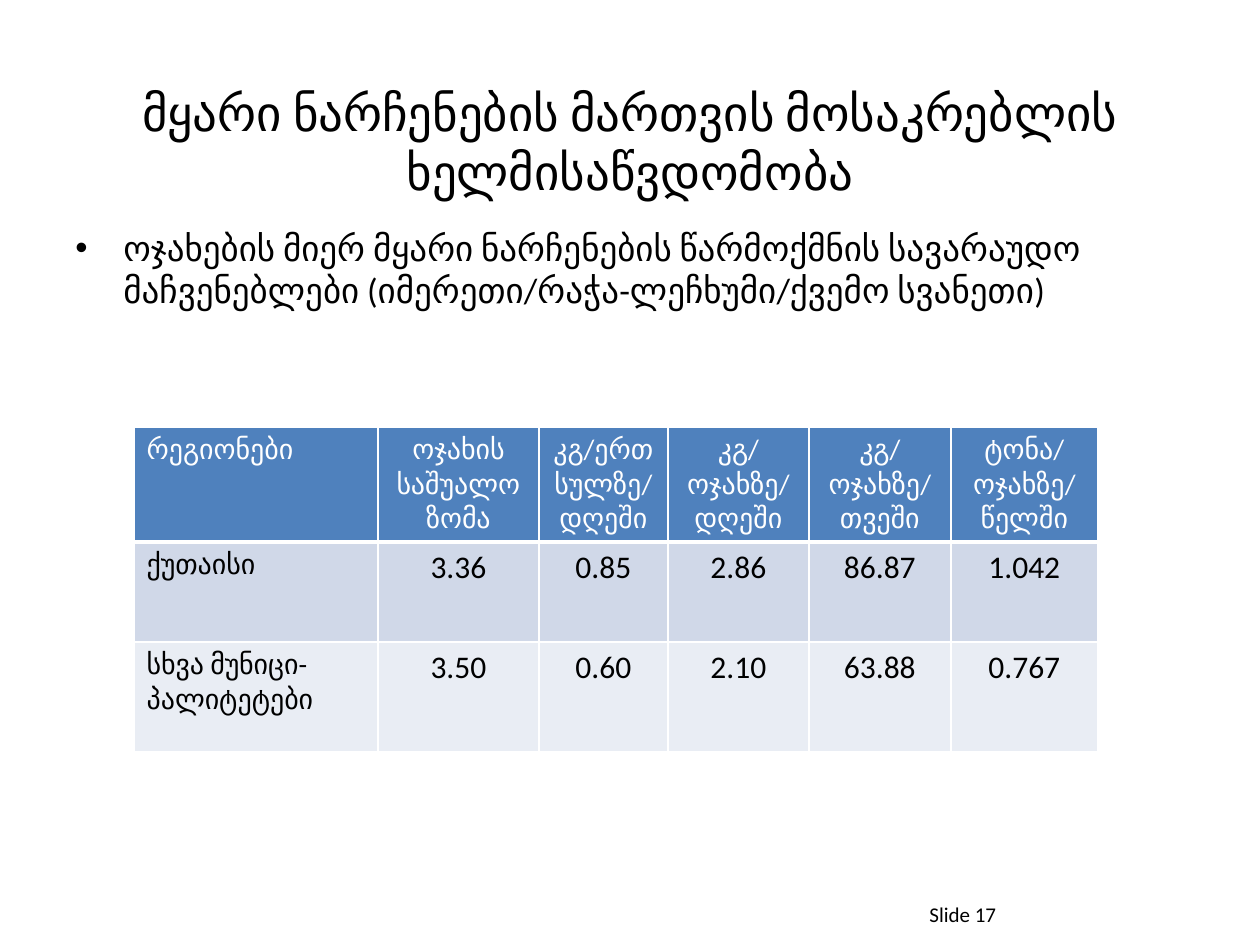
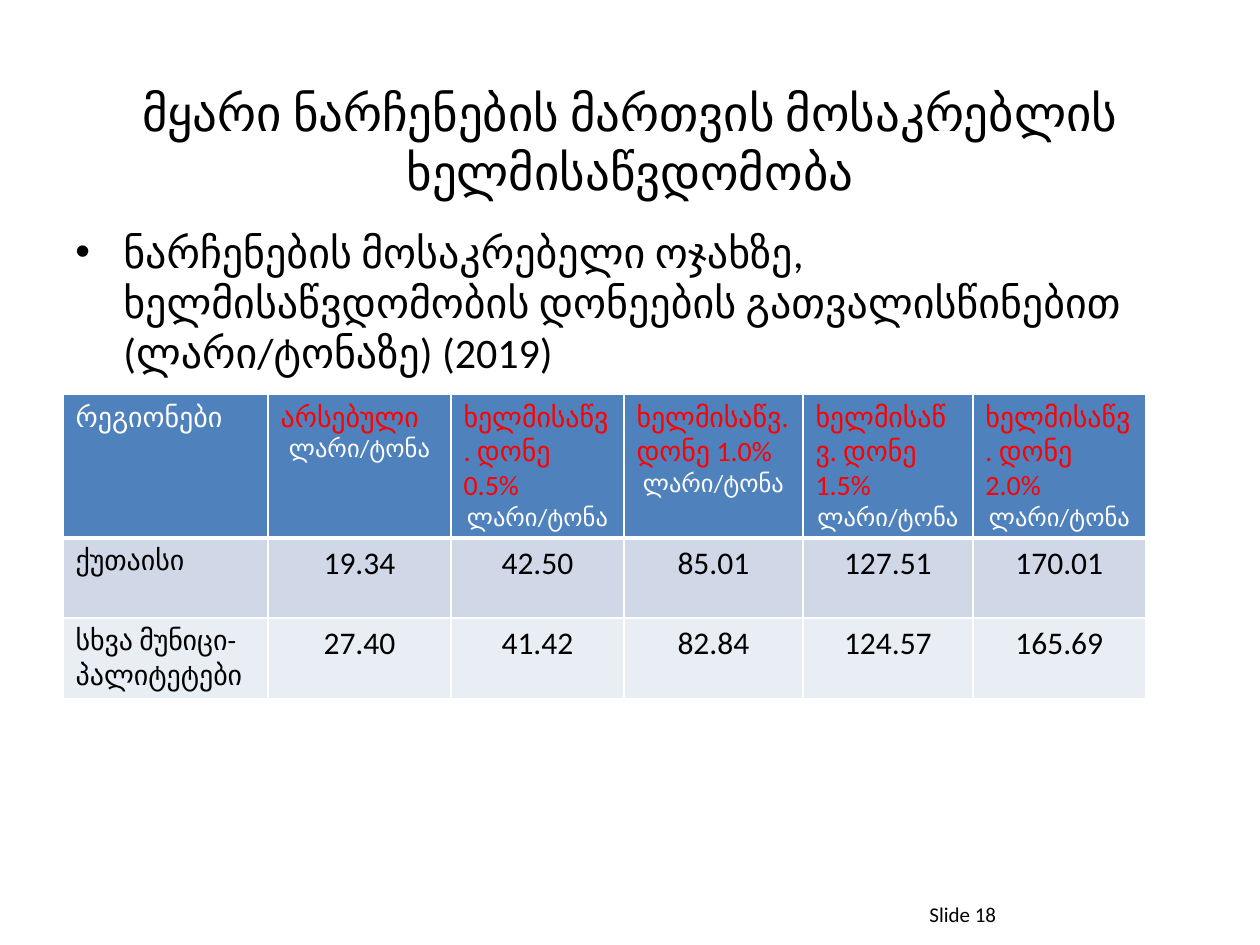
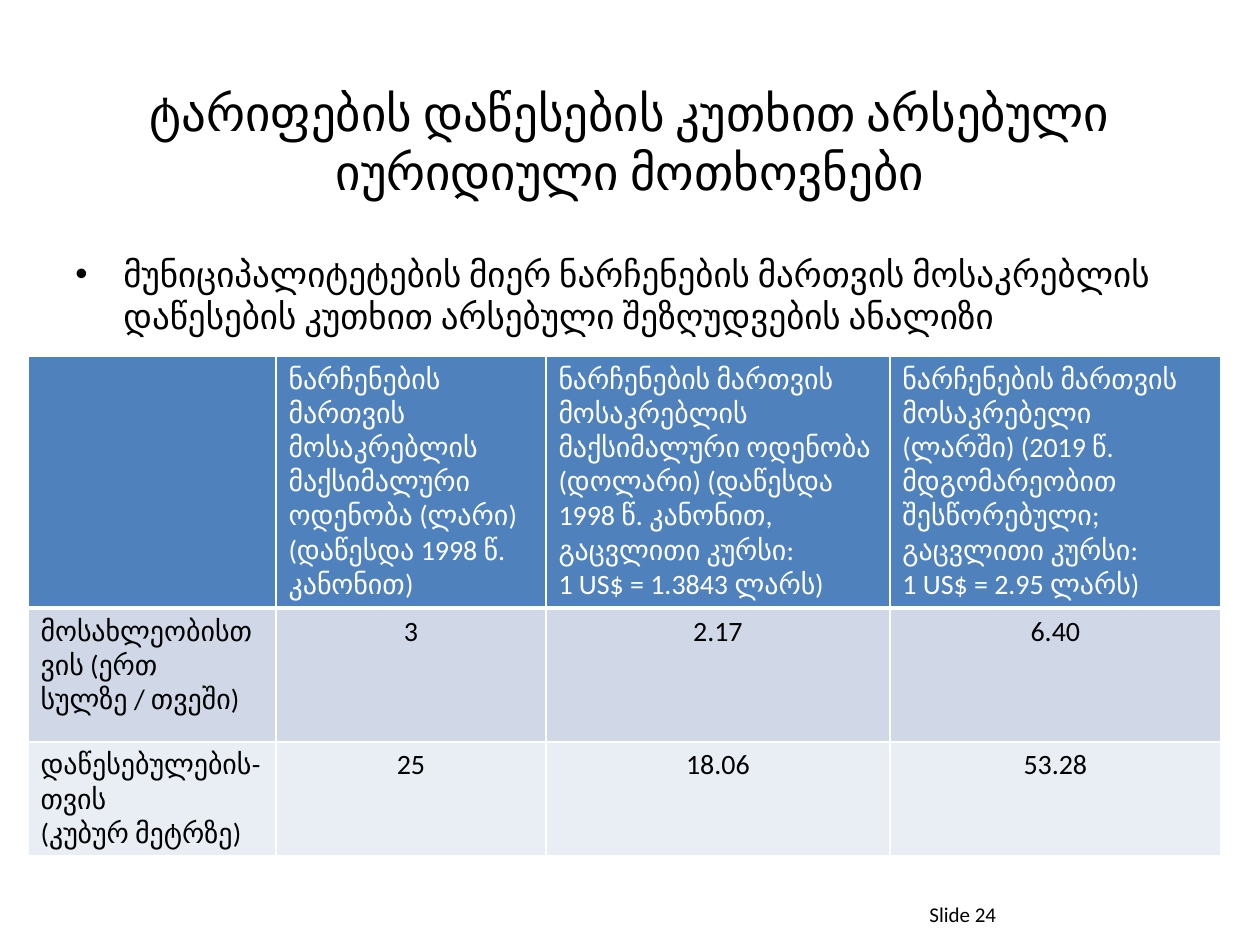
from lxml.etree import SubElement
from pptx import Presentation
from pptx.dml.color import RGBColor
from pptx.enum.text import MSO_ANCHOR as Anchor, PP_ALIGN as Align
from pptx.oxml.ns import qn
from pptx.util import Emu, Pt

FONT = "Calibri"
BLACK = RGBColor(0x00, 0x00, 0x00)
WHITE = RGBColor(0xFF, 0xFF, 0xFF)
RED = RGBColor(0xFF, 0x00, 0x00)
HEADER_BLUE = RGBColor(0x4F, 0x81, 0xBD)
BANDS = [RGBColor(0xD0, 0xD8, 0xE8), RGBColor(0xE9, 0xED, 0xF4)]

AFFORDABILITY = "მყარი ნარჩენების მართვის მოსაკრებლის ხელმისაწვდომობა"
REGIONS = "რეგიონები"
KUTAISI = "ქუთაისი"
OTHERS = "სხვა მუნიცი-პალიტეტები"
UNIT = "ლარი/ტონა"
LEVELS = ["არსებული"] + [f"ხელმისაწვ. დონე {level}%" for level in ("0.5", "1.0", "1.5", "2.0")]

SLIDES = [
    {
        "number": 17,
        "title": AFFORDABILITY,
        "body": "ოჯახების მიერ მყარი ნარჩენების წარმოქმნის სავარაუდო მაჩვენებლები "
                "(იმერეთი/რაჭა-ლეჩხუმი/ქვემო სვანეთი)",
        "body_size": 20, "body_top": 220,
        "table_at": (134, 427),
        "cols": [244, 161, 129, 141, 142, 147],
        "rows": [115, 100, 110],
        "header_align": Align.CENTER, "value_size": 18, "unit": None,
        "header": [REGIONS, "ოჯახის საშუალო ზომა", "კგ/ერთ სულზე/ დღეში",
                   "კგ/ ოჯახზე/ დღეში", "კგ/ ოჯახზე/ თვეში", "ტონა/ ოჯახზე/ წელში"],
        "data": [
            [KUTAISI, "3.36", "0.85", "2.86", "86.87", "1.042"],
            [OTHERS, "3.50", "0.60", "2.10", "63.88", "0.767"],
        ],
    },
    {
        "number": 18,
        "title": AFFORDABILITY,
        "body": "ნარჩენების მოსაკრებელი ოჯახზე, ხელმისაწვდომობის დონეების "
                "გათვალისწინებით (ლარი/ტონაზე) (2019)",
        "body_size": 24, "body_top": 220,
        "table_at": (63, 394),
        "cols": [205, 183, 173, 179, 170, 173],
        "rows": [144, 80, 81],
        "header_align": Align.LEFT, "value_size": 18, "unit": UNIT,
        "header": [REGIONS] + LEVELS,
        "data": [
            [KUTAISI, "19.34", "42.50", "85.01", "127.51", "170.01"],
            [OTHERS, "27.40", "41.42", "82.84", "124.57", "165.69"],
        ],
    },
    {
        "number": 24,
        "title": "ტარიფების დაწესების კუთხით არსებული იურიდიული მოთხოვნები",
        "body": "მუნიციპალიტეტების მიერ ნარჩენების მართვის მოსაკრებლის "
                "დაწესების კუთხით არსებული შეზღუდვების ანალიზი",
        "body_size": 20, "body_top": 246,
        "table_at": (28, 356),
        "cols": [248, 270, 344, 331],
        "rows": [252, 134, 114],
        "header_align": Align.LEFT, "value_size": 16, "unit": None,
        "header": [
            "",
            "ნარჩენების მართვის მოსაკრებლის მაქსიმალური ოდენობა (ლარი) "
            "(დაწესდა 1998 წ. კანონით)",
            "ნარჩენების მართვის მოსაკრებლის მაქსიმალური ოდენობა (დოლარი) "
            "(დაწესდა 1998 წ. კანონით, გაცვლითი კურსი:\n1 US$ = 1.3843 ლარს)",
            "ნარჩენების მართვის მოსაკრებელი (ლარში) (2019 წ. მდგომარეობით "
            "შესწორებული; გაცვლითი კურსი:\n1 US$ = 2.95 ლარს)",
        ],
        "data": [
            ["მოსახლეობისთვის (ერთ სულზე / თვეში)", "3", "2.17", "6.40"],
            ["დაწესებულების-თვის\n(კუბურ მეტრზე)", "25", "18.06", "53.28"],
        ],
    },
]


def px(n):
    return Emu(round(n * 914400 / 126))


def write(p, text, size, color=BLACK, align=Align.LEFT):
    p.alignment = align
    if text:
        r = p.add_run()
        r.text = text
        fmt = {"name": FONT, "size": Pt(size), "bold": False}
        for key, value in fmt.items():
            setattr(r.font, key, value)
        r.font.color.rgb = color


def add_text(s, box, text, size, align=Align.LEFT, anchor=Anchor.TOP):
    tf = s.shapes.add_textbox(*map(px, box)).text_frame
    tf.word_wrap = True
    tf.vertical_anchor = anchor
    p = tf.paragraphs[0]
    write(p, text, size, align=align)
    return p


def add_bullet(p):
    pPr = p._p.get_or_add_pPr()
    pPr.set("marL", str(px(48)))
    pPr.set("indent", str(-px(48)))
    SubElement(pPr, qn("a:buFont"), typeface="Arial")
    SubElement(pPr, qn("a:buChar"), char="•")


def set_borders(cell, bottom):
    tcPr = cell._tc.get_or_add_tcPr()
    widths = {"a:lnL": 1, "a:lnR": 1, "a:lnT": 1, "a:lnB": bottom}
    for i, (tag, width) in enumerate(widths.items()):
        ln = SubElement(tcPr, qn(tag), w=str(Pt(width)))
        fill = SubElement(ln, qn("a:solidFill"))
        SubElement(fill, qn("a:srgbClr"), val=str(WHITE))
        tcPr.remove(ln)
        tcPr.insert(i, ln)


def cell_lines(spec, row, col, text):
    first = col == 0
    if row == 0:
        unit = None if first else spec["unit"]
        color = RED if unit else WHITE
        align = Align.LEFT if first else spec["header_align"]
        lines = [(line, 16, color, align) for line in text.split("\n")]
        return lines + [(unit, 14, WHITE, Align.CENTER)] if unit else lines
    size, align = (16, Align.LEFT) if first else (spec["value_size"], Align.CENTER)
    return [(line, size, BLACK, align) for line in text.split("\n")]


def add_grid(s, spec):
    cols, rows = spec["cols"], spec["rows"]
    box = (*spec["table_at"], sum(cols), sum(rows))
    table = s.shapes.add_table(len(rows), len(cols), *map(px, box)).table
    for column, width in zip(table.columns, cols):
        column.width = px(width)
    for row, height in zip(table.rows, rows):
        row.height = px(height)
    for i, texts in enumerate([spec["header"]] + spec["data"]):
        for j, text in enumerate(texts):
            cell = table.cell(i, j)
            cell.fill.solid()
            cell.fill.fore_color.rgb = BANDS[i - 1] if i else HEADER_BLUE
            set_borders(cell, 1 if i else 3)
            tf = cell.text_frame
            for k, line in enumerate(cell_lines(spec, i, j, text)):
                write(tf.add_paragraph() if k else tf.paragraphs[0], *line)


def build_slide(prs, spec):
    s = prs.slides.add_slide(prs.slide_layouts[6])
    add_text(s, (917, 895, 232, 38), f"Slide {spec['number']}", 12)
    add_text(s, (63, 87, 1134, 108), spec["title"], 28, Align.CENTER, Anchor.MIDDLE)
    top = spec["body_top"]
    add_bullet(add_text(s, (63, top, 1134, 876 - top), spec["body"], spec["body_size"]))
    add_grid(s, spec)


def main():
    prs = Presentation()
    prs.slide_width, prs.slide_height = px(1260), px(945)
    for spec in SLIDES:
        build_slide(prs, spec)
    prs.save("out.pptx")


if __name__ == "__main__":
    main()
